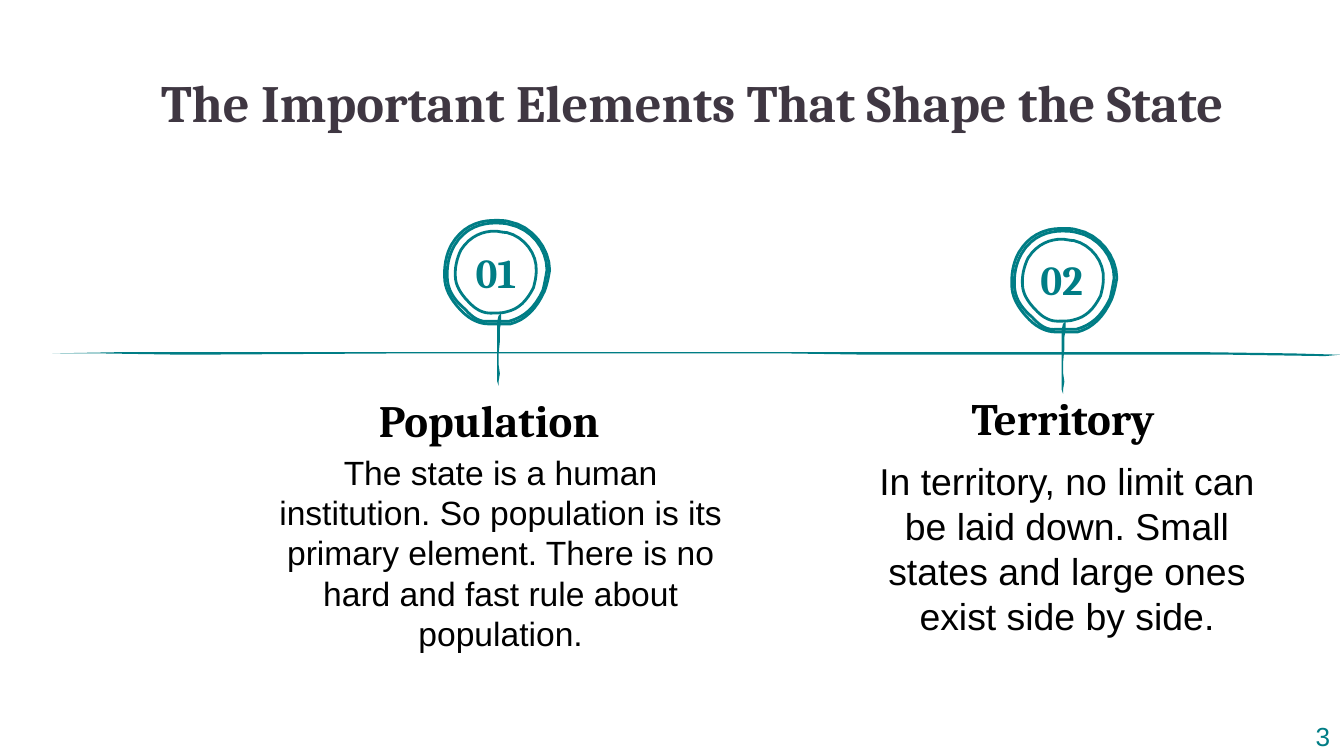
from pptx import Presentation
from pptx.dml.color import RGBColor
from pptx.enum.text import MSO_ANCHOR as Anchor, PP_ALIGN as Align
from pptx.util import Inches, Pt

TEAL, DARK, BLACK = "007D85", "3F3742", "000000"
PIN_OUTER = [(.14, .68), (.20, .74, .27, .77, .33, .77), (.36, .77, .40, .77, .43, .77),
             (.45, .77, .47, .77, .50, .77), (.61, .74, .69, .66, .75, .53),
             (.77, .48, .78, .43, .79, .37), (.79, .21, .66, .04, .49, .01),
             (.46, 0, .42, 0, .38, 0), (.24, 0, .13, .06, .06, .18),
             (.02, .25, 0, .35, .01, .45), (.02, .54, .08, .62, .14, .68)]
PIN_INNER = [(.08, .19), (.16, .05, .29, .02, .38, .02), (.42, .02, .45, .02, .49, .03),
             (.65, .06, .77, .21, .77, .37), (.76, .43, .75, .48, .74, .52),
             (.68, .65, .60, .72, .49, .75), (.44, .75, .39, .75, .34, .75),
             (.28, .76, .22, .73, .16, .66), (.10, .61, .04, .54, .03, .45),
             (.02, .35, .04, .26, .08, .19)]
PIN_CORE = [(.38, .08), (.41, .08, .44, .09, .47, .09), (.60, .12, .70, .25, .69, .38),
            (.69, .42, .68, .46, .67, .50), (.62, .60, .56, .66, .47, .68),
            (.44, .69, .40, .69, .35, .69), (.30, .69, .25, .67, .20, .62),
            (.15, .57, .10, .51, .09, .44), (.08, .36, .10, .28, .13, .22),
            (.20, .11, .30, .08, .38, .08)]
STEM = [(.04, 0), (.02, .02), (.01, .06), (.01, .12), (.01, .21), (.01, .31), (.01, .38),
        (.01, .45), (.01, .51), (.02, .54), (.02, .51), (.03, .45), (.02, .38),
        (.02, .31), (.03, .21), (.03, .12), (.04, .06)]
TIMELINE = [(0, .01), (.53, 0), (5.77, 0), (8.52, 0), (9.23, .01), (9.58, .02), (9.47, .03),
            (8.77, .02), (6.09, .02), (5.45, .01), (2.61, .01), (.98, .02), (.35, .01)]


def color(value):
    """Turn a hex string into a colour."""
    return RGBColor.from_string(value)


def curve_points(path, steps=8):
    """Sample a start point followed by cubic curves."""
    points = [path[0]]
    for x1, y1, x2, y2, x3, y3 in path[1:]:
        x0, y0 = points[-1]
        for i in range(1, steps + 1):
            t = i / steps
            a, b, c, d = (1 - t) ** 3, 3 * t * (1 - t) ** 2, 3 * t * t * (1 - t), t ** 3
            points.append((a * x0 + b * x1 + c * x2 + d * x3,
                           a * y0 + b * y1 + c * y2 + d * y3))
    return points


def add_outline(shapes, x, y, contours, fill=None, line=None):
    """Draw closed contours as one freeform offset by x, y."""
    placed = [[(Inches(x + px), Inches(y + py)) for px, py in c] for c in contours]
    builder = shapes.build_freeform(*placed[0][0], scale=1.0)
    for i, points in enumerate(placed):
        if i:
            builder.move_to(*points[0])
        builder.add_line_segments(points[1:], close=True)
    sp = builder.convert_to_shape()
    sp.shadow.inherit = False
    if fill:
        sp.fill.solid()
        sp.fill.fore_color.rgb = color(fill)
    else:
        sp.fill.background()
    if line:
        sp.line.color.rgb = color(line)
        sp.line.width = Pt(1.5)
    else:
        sp.line.fill.background()


def set_text(sp, text, size, font, rgb, bold=False, anchor=Anchor.TOP,
             align=Align.CENTER, inset=0.1):
    """Write one formatted paragraph into a shape."""
    tf = sp.text_frame
    tf.word_wrap = True
    tf.vertical_anchor = anchor
    tf.margin_left = tf.margin_right = Inches(0.1)
    tf.margin_top = tf.margin_bottom = Inches(inset)
    p = tf.paragraphs[0]
    p.alignment = align
    p.line_spacing = 1.0
    r = p.add_run()
    r.text = text
    r.font.size, r.font.name, r.font.bold = Pt(size), font, bold
    r.font.color.rgb = color(rgb)


def add_text(slide, box, *args, **kwargs):
    """Add a text box at left, top, width, height."""
    set_text(slide.shapes.add_textbox(*map(Inches, box)), *args, **kwargs)


def add_title(slide, box, text):
    """Place the slide title in its placeholder."""
    sp = slide.shapes.title
    sp.left, sp.top, sp.width, sp.height = map(Inches, box)
    set_text(sp, text, 28, "Cambria", DARK, bold=True, anchor=Anchor.MIDDLE)


def add_pin(slide, x, y, number, stem_dx, label_dx, label_dy):
    """Draw a numbered double ring with its stem."""
    add_outline(slide.shapes, x + stem_dx, y + .69, [STEM], fill=TEAL)
    group = slide.shapes.add_group_shape()
    outer, inner, core = map(curve_points, (PIN_OUTER, PIN_INNER, PIN_CORE))
    add_outline(group.shapes, x, y, [outer, inner], line=TEAL)
    add_outline(group.shapes, x, y, [core], line=TEAL)
    add_text(slide, (x + label_dx, y + label_dy, .68, .57), number, 22, "Cambria", TEAL,
             bold=True, anchor=Anchor.MIDDLE)


def add_element(slide, heading_box, heading, body_box, body, size):
    """Write the heading and description of one element."""
    add_text(slide, heading_box, heading, 24, "Cambria", BLACK, bold=True)
    add_text(slide, body_box, body, size, "Arial", BLACK)


def main():
    """Build the slide and save it."""
    prs = Presentation()
    prs.slide_width, prs.slide_height = Inches(10), Inches(10 * 9 / 16)
    slide = prs.slides.add_slide(prs.slide_layouts[5])
    add_title(slide, (.61, .44, 9.08, .63), "The Important Elements That Shape the State")
    add_element(slide, (2.21, 2.82, 2.86, .44), "Population", (1.95, 3.26, 3.55, 1.01),
                "The state is a human institution. So population is its primary element. "
                "There is no hard and fast rule about population.", 18)
    add_element(slide, (6.48, 2.81, 2.86, .44), "Territory", (6.38, 3.31, 3.12, 1.41),
                "In territory, no limit can be laid down. Small states and large ones "
                "exist side by side.", 20)
    add_outline(slide.shapes, .39, 2.62, [TIMELINE], fill=TEAL)
    add_pin(slide, 3.3, 1.64, "01", .39, .05, .1)
    add_pin(slide, 7.52, 1.7, "02", .37, .04, .09)
    add_text(slide, (9.69, 5.31, .31, .31), "3", 14, "Arial", TEAL,
             align=Align.LEFT, inset=.05)
    prs.save("out.pptx")


if __name__ == "__main__":
    main()
